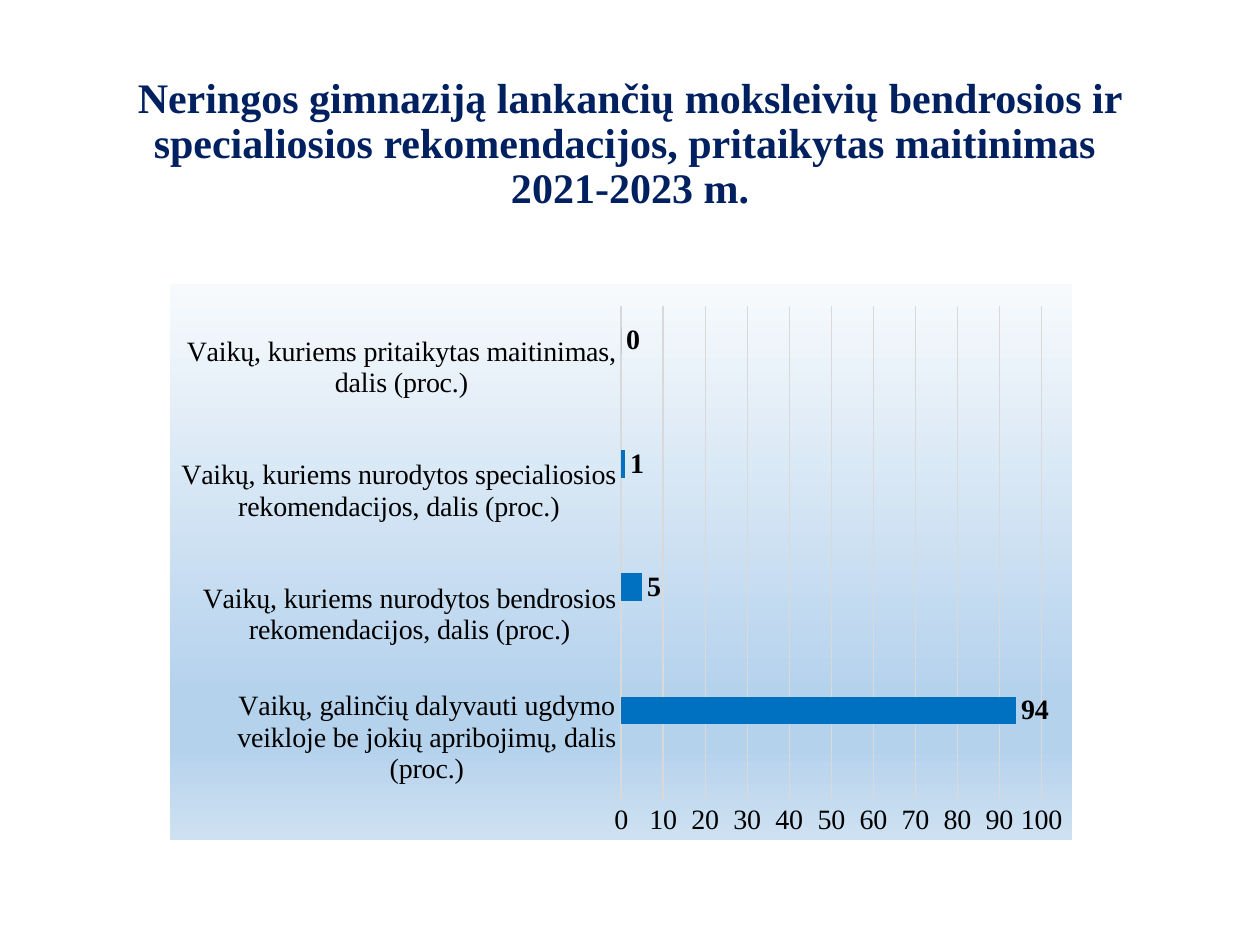
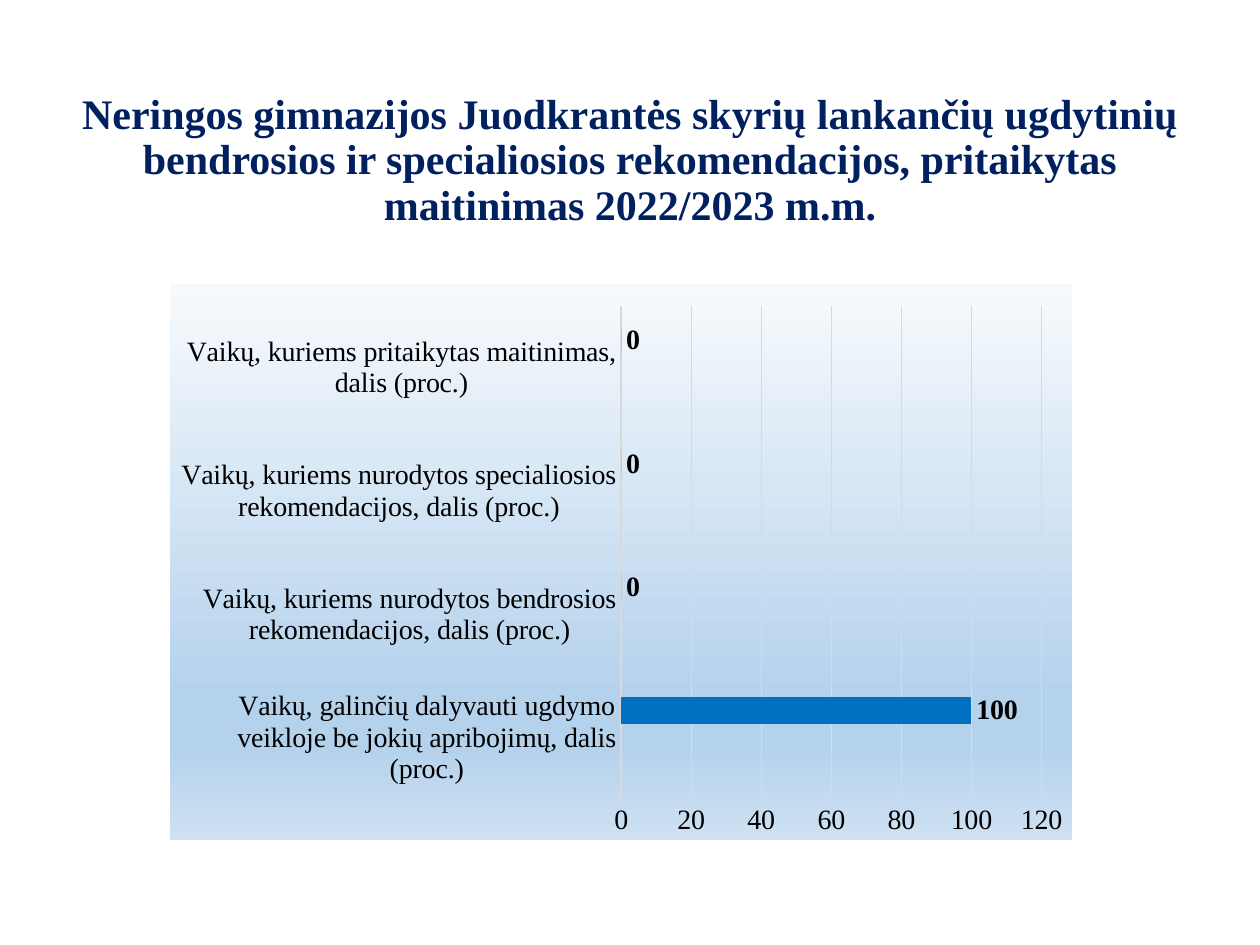
from lxml.etree import SubElement
from pptx import Presentation
from pptx.chart.data import CategoryChartData
from pptx.dml.color import RGBColor
from pptx.enum.chart import XL_CHART_TYPE, XL_LABEL_POSITION, XL_TICK_MARK
from pptx.enum.text import MSO_ANCHOR, MSO_AUTO_SIZE, PP_ALIGN
from pptx.oxml import parse_xml
from pptx.oxml.ns import nsdecls, qn
from pptx.util import Inches, Pt

SLIDES = [
    {"title": "Neringos gimnaziją lankančių moksleivių bendrosios ir specialiosios "
              "rekomendacijos, pritaikytas maitinimas \v2021-2023 m.",
     "top": 0.66, "values": (94, 5, 1, 0), "limit": 100, "step": 10},
    {"title": "Neringos gimnazijos Juodkrantės skyrių lankančių ugdytinių bendrosios ir "
              "specialiosios rekomendacijos, pritaikytas maitinimas 2022/2023 m.m.",
     "top": 0.79, "values": (100, 0, 0, 0), "limit": 120, "step": 20},
]
GROUPS = (
    "Vaikų, galinčių dalyvauti ugdymo veikloje be jokių apribojimų, dalis (proc.)",
    "Vaikų, kuriems nurodytos bendrosios rekomendacijos, dalis (proc.)",
    "Vaikų, kuriems nurodytos specialiosios rekomendacijos, dalis (proc.)",
    "Vaikų, kuriems pritaikytas maitinimas, dalis (proc.)",
)
SERIF, SANS = "Times New Roman", "Calibri"
NAVY, BLACK, GREY, RULE = "002060", "000000", "404040", "D9D9D9"
BARS = ("4472C4", "ED7D31", "0070C0")
FADE = ((0, "F7FAFD"), (74, "B5D2EC"), (83, "B5D2EC"), (100, "CEE1F2"))
PLOT = {"x": 0.5, "y": 0.041, "w": 0.466, "h": 0.886}
WIDTH, HEIGHT = 10, 7.5
MARGIN = 0.31


def color(code):
    return RGBColor.from_string(code)


def style(font, size, code, name=SERIF, bold=False):
    font.name, font.size, font.bold = name, Pt(size), bold
    font.color.rgb = color(code)


def add_title(slide, text, top):
    title = slide.shapes.title
    title.left, title.top = Inches(MARGIN), Inches(top)
    title.width, title.height = Inches(WIDTH - 2 * MARGIN), Inches(1.08)
    frame = title.text_frame
    frame.text = text
    frame.word_wrap = True
    frame.auto_size = MSO_AUTO_SIZE.NONE
    frame.vertical_anchor = MSO_ANCHOR.BOTTOM
    line = frame.paragraphs[0]
    line.alignment, line.line_spacing = PP_ALIGN.CENTER, 0.9
    style(line.font, 24, NAVY, bold=True)


def paint_back(chart):
    stops = "".join(f'<a:gs pos="{pos * 1000}"><a:srgbClr val="{code}"/></a:gs>'
                    for pos, code in FADE)
    back = parse_xml(
        f'<c:spPr {nsdecls("c", "a")}><a:gradFill><a:gsLst>{stops}</a:gsLst>'
        '<a:lin ang="5400000" scaled="1"/></a:gradFill>'
        '<a:ln><a:noFill/></a:ln></c:spPr>')
    chart.element.find(qn("c:chart")).addnext(back)


def place_plot(chart):
    area = chart.element.find(".//" + qn("c:plotArea"))
    for old in area.findall(qn("c:layout")):
        area.remove(old)
    layout = parse_xml(f'<c:layout {nsdecls("c")}><c:manualLayout/></c:layout>')
    marks = [("layoutTarget", "inner"), ("xMode", "edge"), ("yMode", "edge")]
    for tag, value in marks + list(PLOT.items()):
        SubElement(layout[0], qn("c:" + tag)).set("val", str(value))
    area.insert(0, layout)


def add_bars(slide, values, limit, step):
    data = CategoryChartData()
    data.categories = GROUPS
    blank = (None,) * len(GROUPS)
    for count, row in enumerate((blank, blank, values), 1):
        data.add_series(f"Series {count}", row)
    chart = slide.shapes.add_chart(
        XL_CHART_TYPE.BAR_CLUSTERED, Inches(1.35), Inches(2.25),
        Inches(7.16), Inches(4.42), data).chart
    style(chart.font, 10, BLACK, SANS)
    chart.has_legend = chart.has_title = False
    paint_back(chart)
    place_plot(chart)

    for axis in (chart.category_axis, chart.value_axis):
        axis.major_tick_mark = axis.minor_tick_mark = XL_TICK_MARK.NONE
        axis.format.line.fill.background()
        style(axis.tick_labels.font, 16, BLACK)
    scale = chart.value_axis
    scale.minimum_scale, scale.maximum_scale, scale.major_unit = 0, limit, step
    grid = scale.major_gridlines.format.line
    grid.color.rgb, grid.width = color(RULE), Pt(0.75)

    plot = chart.plots[0]
    plot.gap_width, plot.overlap, plot.vary_by_categories = 150, 0, False
    for bar, code in zip(plot.series, BARS):
        bar.format.fill.solid()
        bar.format.fill.fore_color.rgb = color(code)
        bar.invert_if_negative = False
        labels = bar.data_labels
        labels.show_value = True
        labels.position = XL_LABEL_POSITION.OUTSIDE_END
        if code == BARS[-1]:
            style(labels.font, 16, BLACK, bold=True)
        else:
            style(labels.font, 12, GREY, SANS)


def main():
    deck = Presentation()
    deck.slide_width, deck.slide_height = Inches(WIDTH), Inches(HEIGHT)
    for item in SLIDES:
        slide = deck.slides.add_slide(deck.slide_layouts[5])
        add_title(slide, item["title"], item["top"])
        add_bars(slide, item["values"], item["limit"], item["step"])
    deck.save("out.pptx")


if __name__ == "__main__":
    main()
